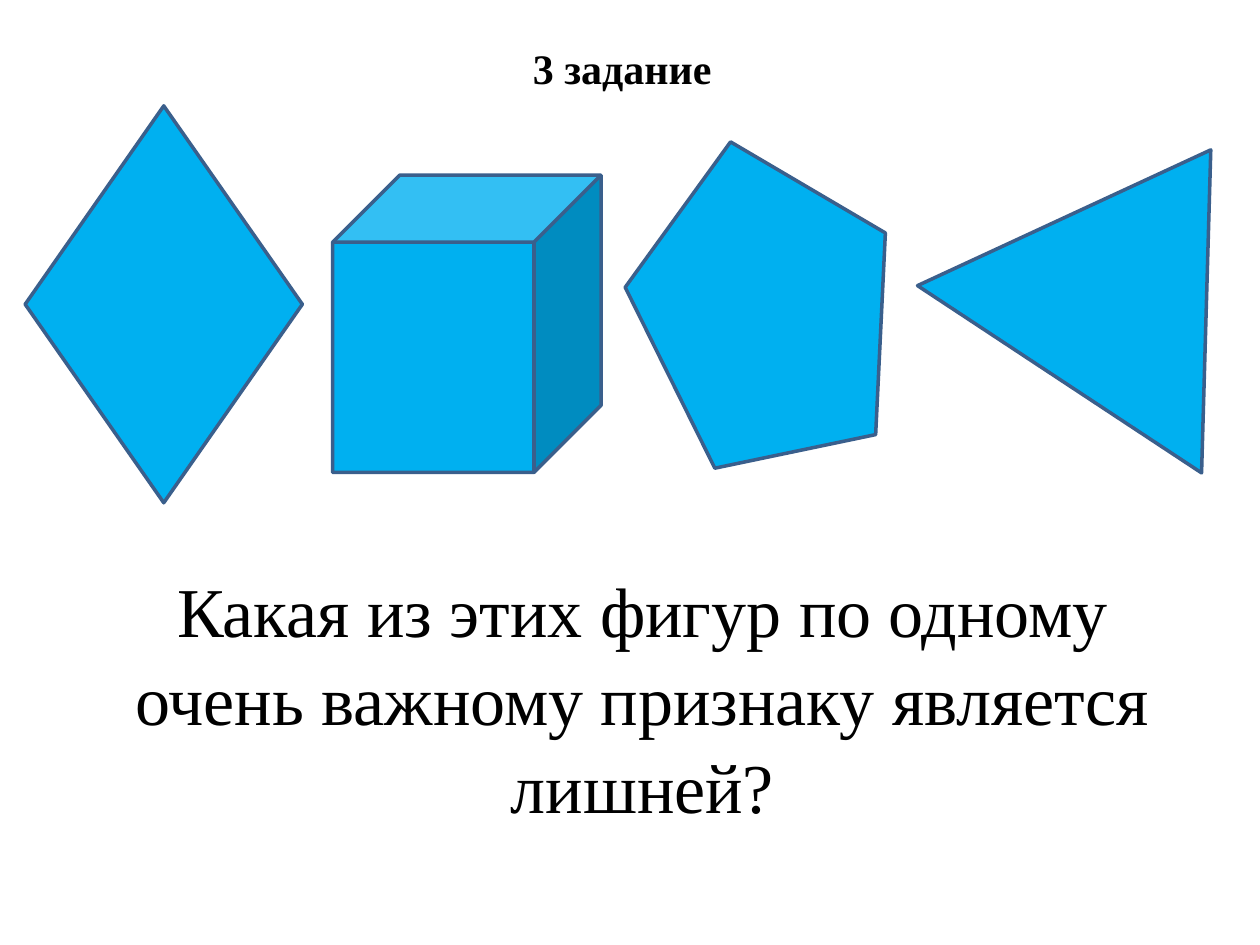
from pptx import Presentation
from pptx.dml.color import RGBColor
from pptx.enum.shapes import MSO_SHAPE
from pptx.enum.text import MSO_ANCHOR, PP_ALIGN
from pptx.util import Pt


def color(value):
    return RGBColor.from_string(value)


class SlideBuilder:
    font = "Times New Roman"
    ink = "000000"
    fill = "00B0F0"
    outline = "3A5F8C"

    def __init__(self, slide):
        self.s = slide

    def text(self, words, box, size, bold=False, wrap=True, spacing=1.0,
             align=PP_ALIGN.LEFT, anchor=MSO_ANCHOR.TOP):
        tf = self.s.shapes.add_textbox(*map(Pt, box)).text_frame
        tf.word_wrap = wrap
        tf.vertical_anchor = anchor
        p = tf.paragraphs[0]
        p.text = words
        p.alignment = align
        p.line_spacing = spacing
        p.font.name = self.font
        p.font.size = Pt(size)
        p.font.bold = bold
        p.font.color.rgb = color(self.ink)

    def figure(self, kind, box, rotation=0):
        sp = self.s.shapes.add_shape(kind, *map(Pt, box))
        sp.rotation = rotation
        sp.shadow.inherit = False
        sp.fill.solid()
        sp.fill.fore_color.rgb = color(self.fill)
        sp.line.color.rgb = color(self.outline)
        sp.line.width = Pt(2)


def main():
    prs = Presentation()
    prs.slide_width, prs.slide_height = Pt(720), Pt(540)
    s = SlideBuilder(prs.slides.add_slide(prs.slide_layouts[6]))

    # Question and heading
    s.text("Какая из этих фигур по одному очень важному признаку является лишней?",
           (48.2, 321.1, 637.9, 152.6), 40, spacing=1.05,
           align=PP_ALIGN.CENTER, anchor=MSO_ANCHOR.MIDDLE)
    s.text("3 задание", (297.4, 20.9, 117.4, 36), 24, bold=True, wrap=False)

    # Figures to compare
    s.figure(MSO_SHAPE.DIAMOND, (14.4, 60.5, 158.4, 226.8))
    s.figure(MSO_SHAPE.REGULAR_PENTAGON, (360, 79.2, 151.9, 180.7), 348.2)
    s.figure(MSO_SHAPE.ISOSCELES_TRIANGLE, (551.5, 72.7, 194.4, 157), 33.4)
    s.figure(MSO_SHAPE.CUBE, (190.1, 100.1, 153.4, 169.9))

    prs.save("out.pptx")


if __name__ == "__main__":
    main()
